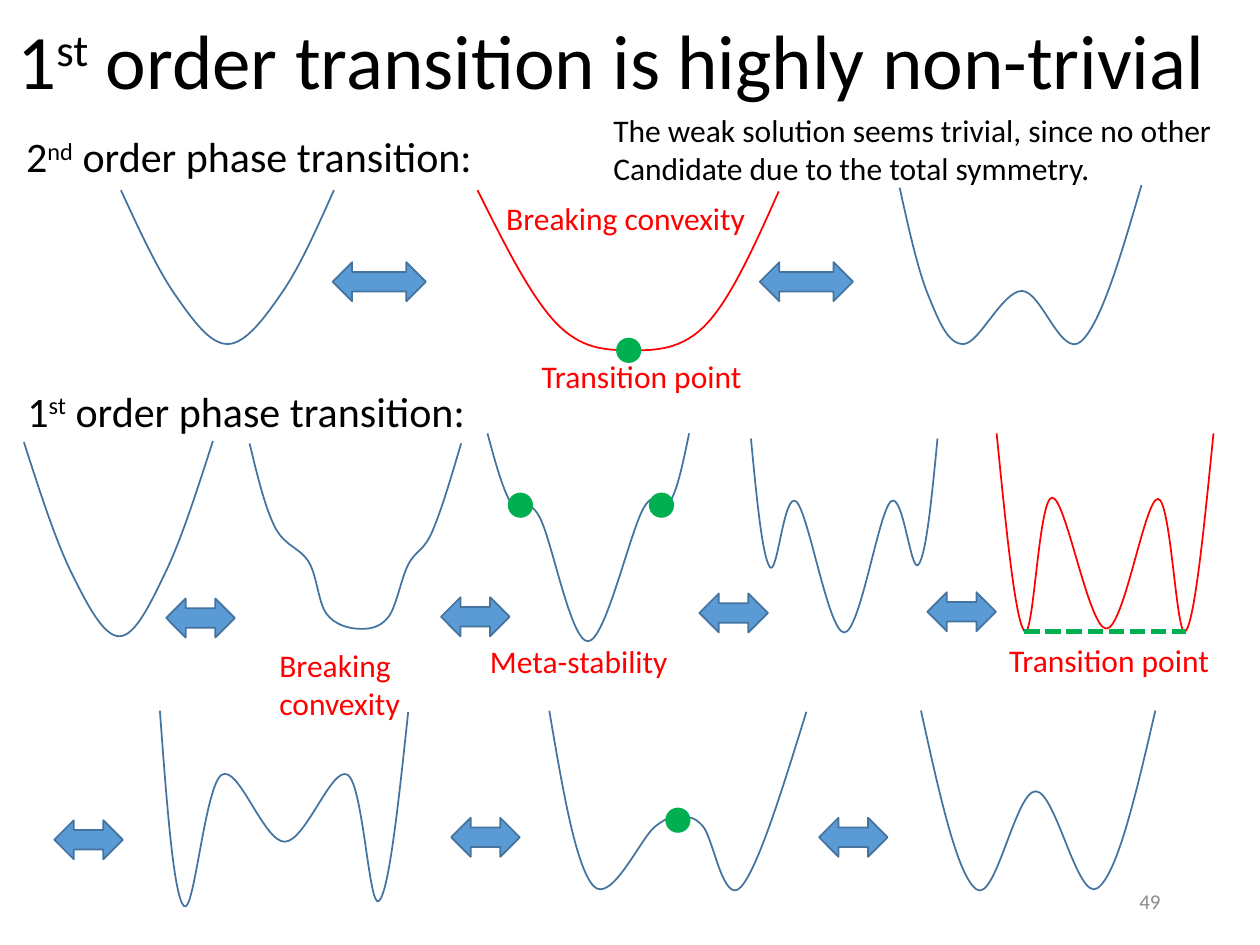
import pptx
import pptx.util
import pptx.dml.color
import pptx.enum.dml
import pptx.enum.shapes
import pptx.enum.text
import pptx.oxml
import pptx.oxml.ns

Pt = pptx.util.Pt
SHAPES = pptx.enum.shapes.MSO_SHAPE
ALIGN = pptx.enum.text.PP_ALIGN
ANCHOR = pptx.enum.text.MSO_ANCHOR
FIT = pptx.enum.text.MSO_AUTO_SIZE
qn = pptx.oxml.ns.qn

COLOURS = {"text": "000000", "number": "8C8C8C", "accent": "FF0000",
           "curve": "43739E", "arrow": "5B9BD5", "marker": "00B050"}
ARROW_HEIGHT = 22.3
DOT_SIZE = 14.4


def rgb(name):
    return pptx.dml.color.RGBColor.from_string(COLOURS[name])


def set_values(target, values):
    for name, value in values.items():
        setattr(target, name, value)


def add_text(page, box, lines, size, colour="text", frame_values=None, para_values=None):
    """Write one paragraph per line; the part between two carets is superscript."""
    frame = page.shapes.add_textbox(*map(Pt, box)).text_frame
    set_values(frame, {"word_wrap": False, "auto_size": FIT.SHAPE_TO_FIT_TEXT,
                       **(frame_values or {})})
    for index, line in enumerate(lines):
        para = frame.add_paragraph() if index else frame.paragraphs[0]
        set_values(para, para_values or {})
        for part, words in enumerate(line.split("^")):
            span = para.add_run()
            span.text = words
            set_values(span.font, {"name": "Calibri", "size": Pt(size)})
            span.font.color.rgb = rgb(colour)
            if part % 2:
                span.font._element.set("baseline", "30000")


def add_label(page, left, top, width, *lines, size=18, colour="accent"):
    height = 7.2 + len(lines) * size * 1.2
    add_text(page, (left, top, width, height), lines, size, colour)


def spline_points(anchors):
    """Return the Bezier points, three per segment, of a smooth curve through the anchors."""
    def midpoint(a, b):
        return tuple((p + q) / 2 for p, q in zip(a, b))

    count = len(anchors)
    before, after = {}, {}
    for i in range(1, count - 1):
        slope = [(q - p) / 6 for p, q in zip(anchors[i - 1], anchors[i + 1])]
        before[i] = tuple(p - s for p, s in zip(anchors[i], slope))
        after[i] = tuple(p + s for p, s in zip(anchors[i], slope))
    after[0] = midpoint(anchors[0], before[1])
    before[count - 1] = midpoint(anchors[-1], after[count - 2])
    return [point for i in range(1, count)
            for point in (after[i - 1], before[i], anchors[i])]


def add_curve(page, left, top, anchors, colour="curve"):
    anchors = [(left + x, top + y) for x, y in anchors]
    points = [(Pt(x), Pt(y)) for x, y in spline_points(anchors)]
    builder = page.shapes.build_freeform(*map(Pt, anchors[0]))
    builder.add_line_segments(points, close=False)
    curve = builder.convert_to_shape()
    segments = list(curve._element.iter(qn("a:lnTo")))
    for i in range(0, len(segments), 3):
        bezier = pptx.oxml.parse_xml(
            f"<a:cubicBezTo {pptx.oxml.ns.nsdecls('a')}/>")
        segments[i].addprevious(bezier)
        for segment in segments[i:i + 3]:
            bezier.append(segment[0])
            segment.getparent().remove(segment)
    curve.shadow.inherit = False
    curve.fill.background()
    curve.line.color.rgb = rgb(colour)
    curve.line.width = Pt(1)


def add_solid(page, kind, box, fill, line=None):
    shape = page.shapes.add_shape(kind, *map(Pt, box))
    shape.shadow.inherit = False
    shape.fill.solid()
    shape.fill.fore_color.rgb = rgb(fill)
    if line:
        shape.line.color.rgb = rgb(line)
        shape.line.width = Pt(1)
    else:
        shape.line.fill.background()


def add_arrow(page, left, top, width=39.2):
    add_solid(page, SHAPES.LEFT_RIGHT_ARROW, (left, top, width, ARROW_HEIGHT), "arrow", "curve")


def add_dot(page, left, top):
    add_solid(page, SHAPES.OVAL, (left, top, DOT_SIZE, DOT_SIZE), "marker")


def add_dashed_line(page, left, top, right):
    line = page.shapes.add_connector(
        pptx.enum.shapes.MSO_CONNECTOR.STRAIGHT, Pt(left), Pt(top), Pt(right), Pt(top))
    line.line.color.rgb = rgb("marker")
    set_values(line.line, {"width": Pt(3),
                           "dash_style": pptx.enum.dml.MSO_LINE.SQUARE_DOT})
    line._element.spPr.append(pptx.oxml.parse_xml(
        f"<a:effectLst {pptx.oxml.ns.nsdecls('a')}/>"))


def add_title(page, box):
    add_text(page, box, ["1^st^ order transition is highly non-trivial"], 44,
             frame_values={"word_wrap": True, "auto_size": FIT.NONE,
                           "vertical_anchor": ANCHOR.MIDDLE},
             para_values={"line_spacing": 0.9})


def add_page_number(page, box):
    add_text(page, box, ["49"], 12, "number",
             {"word_wrap": True, "auto_size": FIT.NONE, "vertical_anchor": ANCHOR.MIDDLE},
             {"alignment": ALIGN.RIGHT})


def add_second_order(page, left, top):
    add_label(page, left + 7.9, top + 11.3, 273.6,
              "2^nd^ order phase transition:", size=24, colour="text")
    add_curve(page, left, top, [(69.1, 48.7), (100.1, 108.5), (130.3, 136.6),
                                (161.3, 107), (190.8, 48.7)])
    add_curve(page, left, top, [(514.1, 47.3), (530.6, 109.2), (550.8, 136.6),
                                (583.9, 106.3), (617.8, 135.1), (652.3, 45.8)])
    add_curve(page, left, top, [(272.9, 48.7), (317.5, 124.3), (360, 140.2),
                                (403.9, 125), (445, 49.4)], "accent")
    for x in (190.1, 434.2):
        add_arrow(page, left + x, top + 89.8, 53.3)
    add_dot(page, left + 352.1, top + 133)
    add_label(page, left + 302.4, top + 140.2, 130.3, "Transition point")
    add_label(page, left + 282.2, top + 50.2, 152.6, "Breaking convexity")
    add_label(page, left + 343.4, top, 360.7,
              "The weak solution seems trivial, since no other",
              "Candidate due to the total symmetry.", colour="text")


def add_first_order(page, left, top):
    add_label(page, left + 8.6, top + 0.7, 268.6,
              "1^st^ order phase transition:", size=24, colour="text")
    for anchors in (
            [(13.7, 36.7), (41, 111.6), (68.4, 147.6), (95, 110.2), (121.7, 36)],
            [(142.6, 37.4), (157, 85), (176.4, 105.1), (186.5, 134.6), (204.5, 143.3),
             (221.8, 136.8), (233.3, 106.6), (247, 87.8), (263.5, 37.4)],
            [(278.6, 31.7), (292.3, 72), (308.2, 79.2), (336.2, 150.5),
             (367.9, 74.2), (383, 70.6), (393.8, 31.7)],
            [(429.1, 34.6), (439.9, 108), (455, 70.6), (482.4, 145.4),
             (509, 70.6), (524.9, 106.6), (535.7, 34.6)]):
        add_curve(page, left, top, anchors)
    add_curve(page, left, top, [(569.5, 31.7), (585.4, 144.7), (601.2, 68.4), (632.2, 143.3),
                                (661.7, 69.1), (677.5, 144.7), (693.4, 31.7)], "accent")
    for x, y in ((95, 126), (252, 125.3), (399.6, 123.1), (529.9, 122.4)):
        add_arrow(page, left + x, top + y)
    for x in (290.2, 370.8):
        add_dot(page, left + x, top + 65.5)
    add_dashed_line(page, left + 585.4, top + 144.7, left + 677.5)
    add_label(page, left + 152.6, top + 149.8, 84.2, "Breaking", "convexity")
    add_label(page, left + 272.9, top + 147.6, 116.6, "Meta-stability")
    add_label(page, left + 569.5, top + 146.9, 130.3, "Transition point")


def add_after_transition(page, left, top):
    for anchors in (
            [(91.4, 6.1), (105.1, 117.7), (126.7, 42.8), (162.7, 81),
             (198.7, 42.8), (216.7, 114.8), (233.3, 6.8)],
            [(313.9, 6.1), (339.1, 106.2), (374.4, 72.3), (388.8, 67.3),
             (401.8, 72.3), (423.4, 106.9), (460.8, 6.8)],
            [(526.3, 6.1), (558, 108.3), (591.8, 52.2), (627.1, 107.6), (660.2, 6.1)]):
        add_curve(page, left, top, anchors)
    for x, y in ((31, 68.7), (257.8, 67.3), (468, 67.3)):
        add_arrow(page, left + x, top + y)
    add_dot(page, left + 380.2, top + 61.5)


def main():
    deck = pptx.Presentation()
    set_values(deck, {"slide_width": Pt(720), "slide_height": Pt(540)})
    page = deck.slides.add_slide(deck.slide_layouts[6])
    add_title(page, (2.9, 0, 712, 73.4))
    add_page_number(page, (508.3, 500.4, 162, 28.8))
    add_second_order(page, 0, 60)
    add_first_order(page, 0, 216)
    add_after_transition(page, 0, 400)
    deck.save("out.pptx")


if __name__ == "__main__":
    main()
